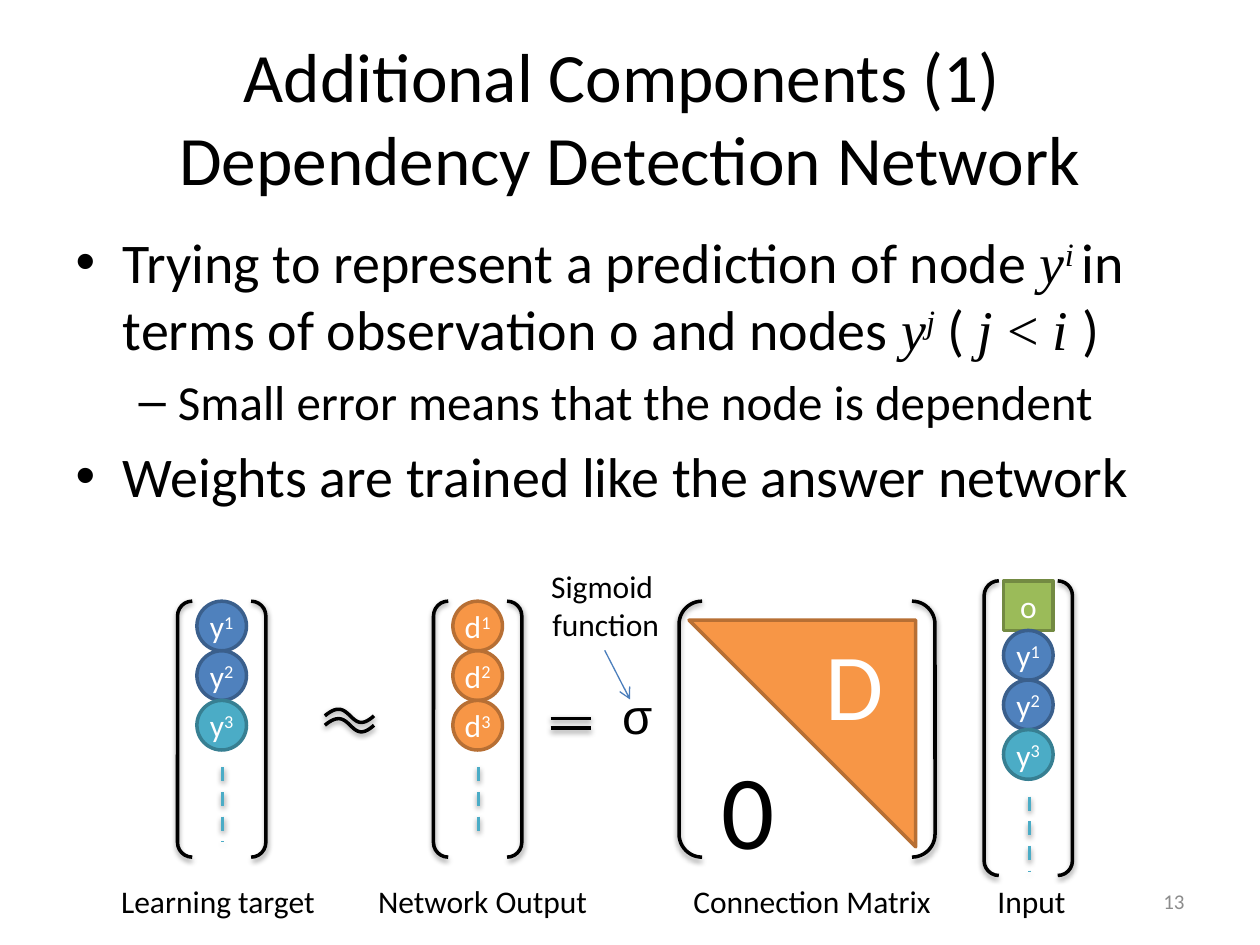
from lxml import etree
from pptx import Presentation
from pptx.dml.color import RGBColor
from pptx.enum import dml, shapes, text
from pptx.oxml import parse_xml
from pptx.oxml.ns import nsdecls, qn
from pptx.util import Cm, Pt

BLACK = RGBColor(0x00, 0x00, 0x00)
WHITE = RGBColor(0xFF, 0xFF, 0xFF)
GRAY = RGBColor(0x8C, 0x8C, 0x8C)
ARROW = RGBColor(0x4B, 0x7E, 0xBC)
BLUE = RGBColor(0x4F, 0x81, 0xBD), RGBColor(0x3A, 0x5F, 0x8C)
TEAL = RGBColor(0x4B, 0xAC, 0xC6), RGBColor(0x37, 0x7F, 0x92)
GREEN = RGBColor(0x9B, 0xBB, 0x59), RGBColor(0x73, 0x8A, 0x42)
ORANGE = RGBColor(0xF7, 0x96, 0x46), RGBColor(0xB7, 0x6F, 0x34)
SERIF = "Times New Roman"
KIND = shapes.MSO_SHAPE
LINE = shapes.MSO_CONNECTOR.STRAIGHT
MID = text.PP_ALIGN.CENTER
LEFT = text.PP_ALIGN.LEFT
RIGHT = text.PP_ALIGN.RIGHT
SHADOW = (
    f'<a:effectLst {nsdecls("a")}>'
    '<a:outerShdw blurRad="40000" dist="20000" dir="5400000" rotWithShape="0">'
    '<a:srgbClr val="000000"><a:alpha val="38000"/></a:srgbClr>'
    '</a:outerShdw></a:effectLst>'
)


def write(para, words, size, color=BLACK, face="Calibri", slant=False, sup=False):
    """Add one run to the paragraph, raised if sup is set."""
    run = para.add_run()
    run.text = words
    run.font.size = Pt(size)
    run.font.name = face
    run.font.color.rgb = color
    run.font.italic = slant
    if sup:
        run.font._element.set("baseline", "30000")


def label(lines, left, top, width, height, size, align=MID, color=BLACK, face="Calibri"):
    """Add a text box with one run for each line."""
    box = deck.add_textbox(Cm(left), Cm(top), Cm(width), Cm(height))
    box.text_frame.word_wrap = True
    para = box.text_frame.paragraphs[0]
    para.alignment = align
    for n, words in enumerate(lines):
        if n:
            para.add_line_break()
        write(para, words, size, color, face)
    return box


prs = Presentation()
prs.slide_width, prs.slide_height = Cm(25.4), Cm(19.05)
slide = prs.slides.add_slide(prs.slide_layouts[1])
deck = slide.shapes

# Title and list
title, body = slide.placeholders
title.left, title.top, title.width, title.height = Cm(1.27), Cm(0.76), Cm(22.86), Cm(3.18)
para = title.text_frame.paragraphs[0]
write(para, "Additional Components (1) ", 39.6)
para.add_line_break()
write(para, "Dependency Detection Network", 39.6)

body.left, body.top, body.width, body.height = Cm(1.27), Cm(4.45), Cm(22.86), Cm(12.57)
para = body.text_frame.paragraphs[0]
for words, face, slant, sup in (
    ("Trying to represent a prediction of node ", "Calibri", False, False),
    ("y", SERIF, True, False),
    ("i ", SERIF, True, True),
    ("in terms of observation o and nodes ", "Calibri", False, False),
    ("y", SERIF, True, False),
    ("j", SERIF, True, True),
    (" ( ", "Calibri", False, False),
    ("j ", SERIF, True, False),
    ("< ", SERIF, False, False),
    ("i ", SERIF, True, False),
    (")", "Calibri", False, False),
):
    write(para, words, 32, BLACK, face, slant, sup)
for words, level, size in (
    ("Small error means that the node is dependent", 1, 28),
    ("Weights are trained like the answer network", 0, 32),
):
    para = body.text_frame.add_paragraph()
    para.level = level
    write(para, words, size)

# Vectors: nodes of 1 cm stacked in a bracket, with a dashed tail
shaded = []
target = [("y", "1", BLUE), ("y", "2", BLUE), ("y", "3", TEAL)]
output = [("d", n, ORANGE) for n in "123"]
for left, top, height, tail, nodes in (
    (3.58, 12.12, 5.16, 1.5, target),
    (8.74, 12.12, 5.16, 1.4, output),
    (19.84, 11.71, 5.94, 1.5, [("o", "", GREEN)] + target),
):
    for n, (name, sup, (fill, edge)) in enumerate(nodes):
        kind = KIND.OVAL if sup else KIND.RECTANGLE
        node = deck.add_shape(kind, Cm(left + 0.39), Cm(top + n), Cm(1), Cm(1))
        node.shadow.inherit = False
        node.fill.solid()
        node.fill.fore_color.rgb = fill
        node.line.color.rgb = edge
        node.line.width = Pt(2)
        node.text_frame.word_wrap = False
        node.text_frame.vertical_anchor = text.MSO_ANCHOR.MIDDLE
        para = node.text_frame.paragraphs[0]
        para.alignment = MID
        write(para, name, 18, WHITE)
        if sup:
            write(para, sup, 18, WHITE, sup=True)
    x, y = Cm(left + 0.91), top + len(nodes) + 0.35
    dash = deck.add_connector(LINE, x, Cm(y), x, Cm(y + tail))
    dash.line.color.rgb = TEAL[0]
    dash.line.dash_style = dml.MSO_LINE.DASH
    pair = deck.add_shape(KIND.DOUBLE_BRACKET, Cm(left), Cm(top), Cm(1.78), Cm(height))
    shaded += [dash, pair]

# Connection matrix
pair = deck.add_shape(KIND.DOUBLE_BRACKET, Cm(13.69), Cm(12.12), Cm(5.16), Cm(5.16))
pair.adjustments[0] = 0.09
shaded.append(pair)
label(["0"], 14.3, 14.88, 1.98, 2.82, 60, LEFT)
wedge = deck.add_shape(KIND.RIGHT_TRIANGLE, Cm(13.89), Cm(12.5), Cm(4.57), Cm(4.57))
wedge.rotation = 180
wedge.shadow.inherit = False
wedge.fill.solid()
wedge.fill.fore_color.rgb, wedge.line.color.rgb = ORANGE
wedge.line.width = Pt(2)
label(["D"], 15.67, 12.5, 2.39, 2.57, 54, RIGHT, WHITE)

# Equals sign
for y in (14.48, 14.68):
    bar = deck.add_connector(LINE, Cm(11.1), Cm(y), Cm(11.91), Cm(y))
    bar.line.color.rgb = BLACK
    shaded.append(bar)

# Approximation sign: two waves, each a sampled cubic curve
steps = 30
for y in (14.43, 14.62):
    curve = []
    for n in range(steps + 1):
        t = n / steps
        a, b, c, d = (1 - t) ** 3, 3 * t * (1 - t) ** 2, 3 * t * t * (1 - t), t ** 3
        curve.append((Cm(6.55 * a + 7.09 * b + 7.04 * c + 7.54 * d), Cm(y + 0.46 * (c - b))))
    pen = deck.build_freeform(*curve[0])
    pen.add_line_segments(curve[1:], close=False)
    shaded.append(pen.convert_to_shape())

for item in shaded:
    item.line.width = Pt(2)
    if not isinstance(item.line.color.type, dml.MSO_COLOR_TYPE) or item.line.color.type != dml.MSO_COLOR_TYPE.RGB:
        item.fill.background()
        item.line.color.rgb = BLACK
    item._element.spPr.append(parse_xml(SHADOW))

# Sigmoid
label(["σ"], 12.29, 13.69, 1.2, 1.45, 28, LEFT, face="Arial")
label(["Sigmoid ", "function"], 9.53, 11.3, 5.36, 1.8, 18)
arrow = deck.add_connector(LINE, Cm(12.19), Cm(13.11), Cm(12.7), Cm(14.1))
arrow.line.color.rgb = ARROW
arrow.line.width = Pt(0.75)
etree.SubElement(arrow.line._get_or_add_ln(), qn("a:tailEnd"), type="arrow")
etree.SubElement(arrow._element.spPr, qn("a:effectLst"))

# Captions and page number
for words, left, width in (
    ("Learning target", 2.16, 4.47),
    ("Network Output", 7.34, 4.78),
    ("Connection Matrix", 13.69, 5.36),
    ("Input", 19.84, 1.91),
):
    label([words], left, 17.65, width, 1.02, 18).text_frame.word_wrap = False
page = label(["13"], 18.21, 17.65, 5.92, 1.02, 12, RIGHT, GRAY)
page.text_frame.vertical_anchor = text.MSO_ANCHOR.MIDDLE

prs.save("out.pptx")
